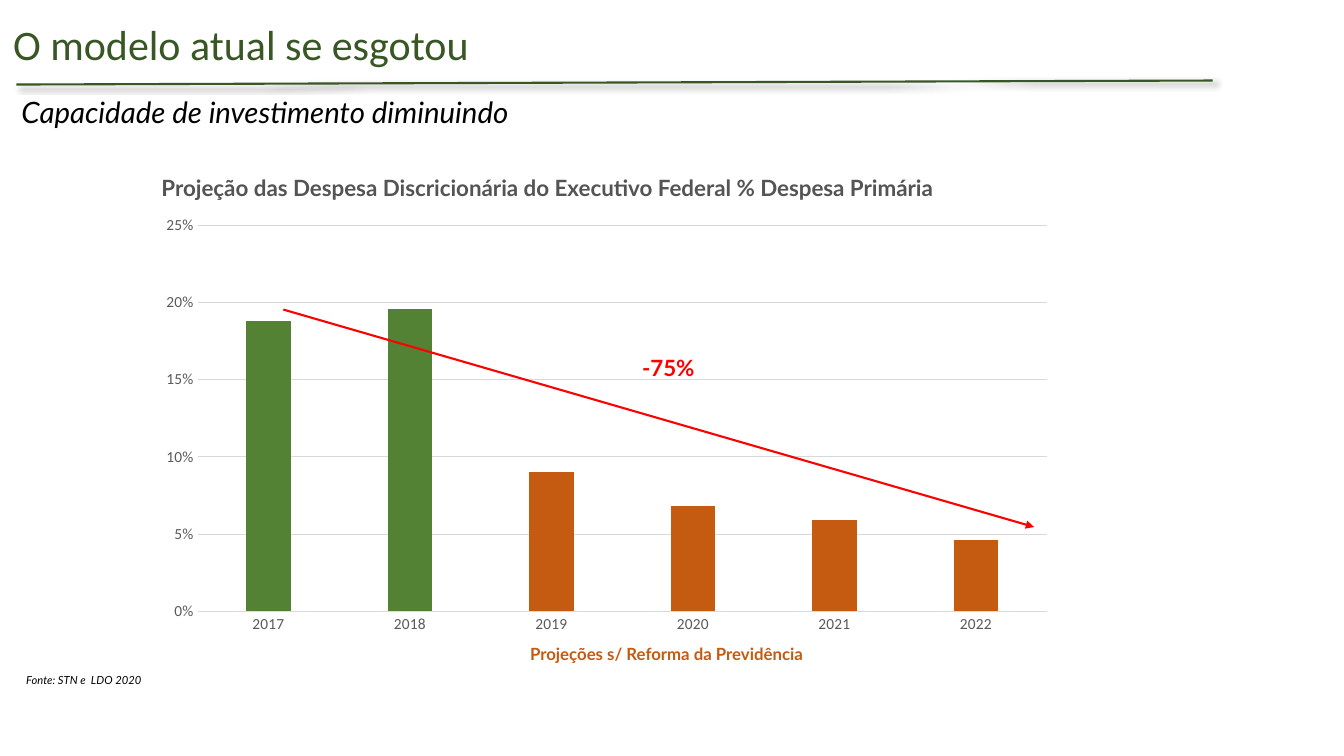
from dataclasses import dataclass

from lxml.etree import SubElement
from pptx import Presentation
from pptx.chart.data import CategoryChartData
from pptx.dml.color import RGBColor
from pptx.enum.chart import XL_CHART_TYPE as ChartType, XL_TICK_MARK as TickMark
from pptx.enum.shapes import MSO_CONNECTOR as Connector
from pptx.enum.text import MSO_ANCHOR as Anchor, MSO_AUTO_SIZE as AutoSize, PP_ALIGN as Align
from pptx.oxml import parse_xml
from pptx.oxml.ns import nsdecls, qn
from pptx.util import Cm, Pt


@dataclass(frozen=True)
class Theme:
    heading_font: str = "Calibri"
    body_font: str = "Lato"
    title: RGBColor = RGBColor(0x38, 0x57, 0x24)
    text: RGBColor = RGBColor(0, 0, 0)
    chart_title: RGBColor = RGBColor(0x54, 0x54, 0x54)
    axis: RGBColor = RGBColor(0x59, 0x59, 0x59)
    grid: RGBColor = RGBColor(0xD9, 0xD9, 0xD9)
    actual: RGBColor = RGBColor(0x54, 0x82, 0x35)
    projected: RGBColor = RGBColor(0xC5, 0x5A, 0x11)
    fall: RGBColor = RGBColor(0xFF, 0, 0)
    title_size: Pt = Pt(30)
    subtitle_size: Pt = Pt(21)
    heading_size: Pt = Pt(16)
    note_size: Pt = Pt(12)
    axis_size: Pt = Pt(11)
    source_size: Pt = Pt(8)


THEME = Theme()
DISCRETIONARY_SHARE = {
    "2017": 0.188, "2018": 0.196, "2019": 0.09,
    "2020": 0.068, "2021": 0.059, "2022": 0.046,
}
ACTUAL_YEARS = ("2017", "2018")
LINE_SHADOW = (
    f'<a:effectLst {nsdecls("a")}>'
    '<a:outerShdw blurRad="50800" dist="38100" dir="2700000" algn="tl" rotWithShape="0">'
    '<a:srgbClr val="000000"><a:alpha val="40000"/></a:srgbClr>'
    '</a:outerShdw></a:effectLst>'
)
NO_EFFECT = f'<a:effectLst {nsdecls("a")}/>'


def set_attributes(target, values):
    for name, value in values.items():
        setattr(target, name, value)


def set_font(font, color, **values):
    set_attributes(font, values)
    font.color.rgb = color


def fill_text(shape, text, color, font, frame=None, paragraph_format=None):
    text_frame = shape.text_frame
    margins = dict.fromkeys(
        ("margin_left", "margin_right", "margin_top", "margin_bottom"), Cm(0.13))
    set_attributes(text_frame, margins | (frame or {}))
    paragraph = text_frame.paragraphs[0]
    set_attributes(paragraph, paragraph_format or {})
    run = paragraph.add_run()
    run.text = text
    set_font(run.font, color, **font)


def place_title(slide, text):
    title = slide.shapes.title
    set_attributes(title, {"left": Cm(0.2), "top": Cm(0.46),
                           "width": Cm(29.72), "height": Cm(1.42)})
    fill_text(title, text, THEME.title,
              {"name": THEME.heading_font, "size": THEME.title_size},
              {"vertical_anchor": Anchor.MIDDLE, "auto_size": AutoSize.NONE},
              {"alignment": Align.LEFT, "line_spacing": 0.9})


def add_subtitle(slide, text):
    box = slide.shapes.add_textbox(Cm(0.41), Cm(2.34), Cm(33.45), Cm(1.17))
    fill_text(box, text, THEME.text,
              {"name": THEME.body_font, "size": THEME.subtitle_size, "italic": True},
              {"word_wrap": True},
              {"alignment": Align.JUSTIFY, "line_spacing": 0.9})


def add_label(slide, text, box, color, size, side=0.13, **style):
    label = slide.shapes.add_textbox(*map(Cm, box))
    fill_text(label, text, color, {"name": THEME.body_font, "size": size} | style,
              {"word_wrap": False, "auto_size": AutoSize.SHAPE_TO_FIT_TEXT,
               "margin_left": Cm(side), "margin_right": Cm(side)})


def add_line(slide, start, end, color, effect=NO_EFFECT, arrow=False):
    line = slide.shapes.add_connector(Connector.STRAIGHT, *map(Cm, start + end))
    line.line.color.rgb = color
    line.line.width = Pt(1.5)
    if arrow:
        SubElement(line.line._get_or_add_ln(), qn("a:tailEnd"), type="triangle")
    line._element.spPr.append(parse_xml(effect))


def set_plot_layout(chart, **fractions):
    plot_area = chart._chartSpace.chart.plotArea
    for old_layout in plot_area.findall(qn("c:layout")):
        plot_area.remove(old_layout)
    positions = "".join(f'<c:{name} val="{value}"/>' for name, value in fractions.items())
    plot_area.insert(0, parse_xml(
        f'<c:layout {nsdecls("c")}><c:manualLayout><c:layoutTarget val="inner"/>'
        f'<c:xMode val="edge"/><c:yMode val="edge"/>{positions}'
        '</c:manualLayout></c:layout>'))


def format_axes(chart):
    for axis in (chart.category_axis, chart.value_axis):
        set_attributes(axis, {"major_tick_mark": TickMark.NONE,
                              "minor_tick_mark": TickMark.NONE})
        set_font(axis.tick_labels.font, THEME.axis,
                 name=THEME.heading_font, size=THEME.axis_size)
    value_axis = chart.value_axis
    set_attributes(value_axis, {"minimum_scale": 0, "maximum_scale": 0.25,
                                "major_unit": 0.05, "has_major_gridlines": True})
    set_attributes(value_axis.tick_labels,
                   {"number_format": "0%", "number_format_is_linked": False})
    value_axis.format.line.fill.background()
    for line in (chart.category_axis.format.line, value_axis.major_gridlines.format.line):
        line.color.rgb = THEME.grid
        line.width = Pt(0.75)


def add_share_chart(slide):
    data = CategoryChartData(number_format="0%")
    data.categories = list(DISCRETIONARY_SHARE)
    data.add_series("Series 1", DISCRETIONARY_SHARE.values())
    chart = slide.shapes.add_chart(ChartType.COLUMN_CLUSTERED, Cm(2.95), Cm(5.44),
                                   Cm(24.18), Cm(11.71), data).chart
    set_attributes(chart, {"has_legend": False, "has_title": False})
    set_font(chart.font, THEME.text, name=THEME.heading_font, size=Pt(10))
    plot = chart.plots[0]
    set_attributes(plot, {"gap_width": 219, "vary_by_categories": False})
    series = plot.series[0]
    series.format.fill.solid()
    series.format.fill.fore_color.rgb = THEME.projected
    for index, year in enumerate(DISCRETIONARY_SHARE):
        if year in ACTUAL_YEARS:
            fill = series.points[index].format.fill
            fill.solid()
            fill.fore_color.rgb = THEME.actual
    format_axes(chart)
    set_plot_layout(chart, x=0.084, y=0.02, w=0.885, h=0.831)


def main():
    presentation = Presentation()
    set_attributes(presentation, {"slide_width": Cm(33.87), "slide_height": Cm(19.05)})
    slide = presentation.slides.add_slide(presentation.slide_layouts[5])
    place_title(slide, "O modelo atual se esgotou")
    add_subtitle(slide, "Capacidade de investimento diminuindo")
    add_line(slide, (0.41, 2.13), (30.56, 2.03), THEME.title, LINE_SHADOW)
    add_label(slide, "Fonte: STN e  LDO 2020", (0.41, 16.84, 3.53, 0.61),
              THEME.text, THEME.source_size, side=0.25, italic=True)
    add_share_chart(slide)
    add_label(slide, "Projeções s/ Reforma da Previdência", (13.11, 16.08, 7.85, 0.76),
              THEME.projected, THEME.note_size, side=0.25, bold=True)
    add_line(slide, (7.14, 7.8), (26.06, 13.28), THEME.fall, arrow=True)
    add_label(slide, "-75%", (16.05, 8.79, 2.51, 1.45),
              THEME.fall, THEME.heading_size, bold=True)
    add_label(slide,
              "Projeção das Despesa Discricionária do Executivo Federal % Despesa Primária",
              (3.94, 4.27, 20.88, 0.94), THEME.chart_title, THEME.heading_size, bold=True)
    presentation.save("out.pptx")


if __name__ == "__main__":
    main()
